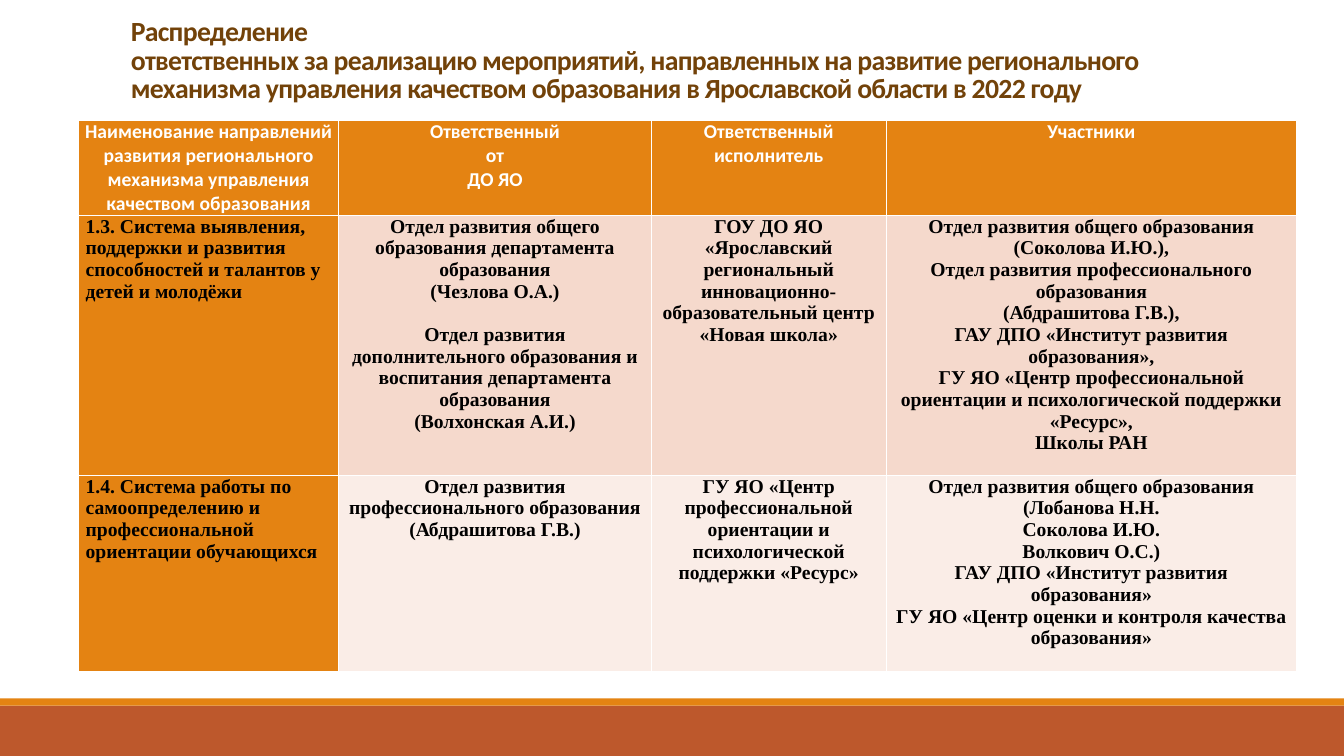
from dataclasses import dataclass

from pptx import Presentation
from pptx.dml.color import RGBColor
from pptx.enum.shapes import MSO_SHAPE
from pptx.enum.text import PP_ALIGN
from pptx.util import Inches, Pt

RECTANGLE = MSO_SHAPE.RECTANGLE
LEFT = PP_ALIGN.LEFT
CENTER = PP_ALIGN.CENTER


@dataclass(frozen=True)
class Theme:
    heading_font: str = "Calibri"
    body_font: str = "Times New Roman"
    title_size: float = 19.8
    table_size: float = 14
    title_color: str = "724209"
    header_text: str = "FFFFFF"
    body_text: str = "000000"
    accent: str = "E48312"
    footer: str = "BD582C"
    row_fills: tuple = ("F5D9CC", "FAEDE7")


TITLE = (
    "Распределение\n"
    "ответственных за реализацию мероприятий, направленных на развитие "
    "регионального механизма управления качеством образования "
    "в Ярославской области в 2022 году"
)
HEADERS = [
    "Наименование направлений развития регионального механизма управления качеством образования",
    "Ответственный\nот\nДО ЯО",
    "Ответственный\nисполнитель",
    "Участники",
]
ROWS = [
    [
        "1.3. Система выявления, поддержки и развития способностей и талантов у детей и молодёжи",
        "Отдел развития общего образования департамента образования\n"
        "(Чезлова О.А.)\n"
        "Отдел развития дополнительного образования и воспитания департамента образования\n"
        "(Волхонская А.И.)",
        "ГОУ ДО ЯО «Ярославский региональный инновационно-образовательный центр «Новая школа»",
        "Отдел развития общего образования\n"
        "(Соколова И.Ю.),\n"
        "Отдел развития профессионального образования\n"
        "(Абдрашитова Г.В.),\n"
        "ГАУ ДПО «Институт развития образования»,\n"
        "ГУ ЯО «Центр профессиональной ориентации и психологической поддержки «Ресурс»,\n"
        "Школы РАН",
    ],
    [
        "1.4. Система работы по самоопределению и профессиональной ориентации обучающихся",
        "Отдел развития профессионального образования\n(Абдрашитова Г.В.)",
        "ГУ ЯО «Центр профессиональной ориентации и психологической поддержки «Ресурс»",
        "Отдел развития общего образования\n"
        "(Лобанова Н.Н.\n"
        "Соколова И.Ю.\n"
        "Волкович О.С.)\n"
        "ГАУ ДПО «Институт развития образования»\n"
        "ГУ ЯО «Центр оценки и контроля качества образования»",
    ],
]
COLUMN_WIDTHS = [2.58, 3.1, 2.33, 4.07]
ROW_HEIGHTS = [0.95, 2.58, 1.94]


class SlideBuilder:
    def __init__(self, slide, theme):
        self.slide = slide
        self.theme = theme

    def format_text(self, text_frame, font, size, color, alignment):
        for paragraph in text_frame.paragraphs:
            paragraph.alignment = alignment
            for run in paragraph.runs:
                run.font.name = font
                run.font.size = Pt(size)
                run.font.bold = True
                run.font.color.rgb = RGBColor.from_string(color)

    def band(self, top, height, color):
        shape = self.slide.shapes.add_shape(
            RECTANGLE, 0, Inches(top), Inches(13.33), Inches(height)
        )
        shape.shadow.inherit = False
        shape.fill.solid()
        shape.fill.fore_color.rgb = RGBColor.from_string(color)
        shape.line.fill.background()

    def title(self, text, left, top, width, height):
        shape = self.slide.shapes.add_textbox(
            Inches(left), Inches(top), Inches(width), Inches(height)
        )
        text_frame = shape.text_frame
        text_frame.word_wrap = True
        text_frame.margin_top = text_frame.margin_bottom = 0
        text_frame.text = text
        theme = self.theme
        self.format_text(
            text_frame, theme.heading_font, theme.title_size, theme.title_color, LEFT
        )
        for paragraph in text_frame.paragraphs:
            paragraph.line_spacing = 0.85
            for run in paragraph.runs:
                run.font._element.set("spc", "-50")

    def cell(self, cell, text, fill, font, color, alignment, margin):
        cell.fill.solid()
        cell.fill.fore_color.rgb = RGBColor.from_string(fill)
        cell.margin_left = cell.margin_right = Inches(margin)
        cell.margin_top = cell.margin_bottom = 0
        cell.text_frame.text = text
        self.format_text(
            cell.text_frame, font, self.theme.table_size, color, alignment
        )

    def table(self, headers, rows, left, top):
        theme = self.theme
        table = self.slide.shapes.add_table(
            len(rows) + 1, len(headers), Inches(left), Inches(top),
            Inches(sum(COLUMN_WIDTHS)), Inches(sum(ROW_HEIGHTS)),
        ).table
        for column, width in zip(table.columns, COLUMN_WIDTHS):
            column.width = Inches(width)
        for row, height in zip(table.rows, ROW_HEIGHTS):
            row.height = Inches(height)
        for column, text in enumerate(headers):
            self.cell(
                table.cell(0, column), text, theme.accent,
                theme.heading_font, theme.header_text, CENTER, 0.06,
            )
        for row, (texts, row_fill) in enumerate(zip(rows, theme.row_fills), start=1):
            for column, text in enumerate(texts):
                fill, alignment = (row_fill, CENTER) if column else (theme.accent, LEFT)
                self.cell(
                    table.cell(row, column), text, fill,
                    theme.body_font, theme.body_text, alignment, 0.07,
                )
        return table


def main():
    presentation = Presentation()
    presentation.slide_width = Inches(13.33)
    presentation.slide_height = Inches(7.5)
    slide = presentation.slides.add_slide(presentation.slide_layouts[6])
    theme = Theme()
    builder = SlideBuilder(slide, theme)
    builder.band(7, 0.5, theme.footer)
    builder.band(6.93, 0.07, theme.accent)
    builder.title(TITLE, 1.2, 0.19, 11, 0.9)
    table = builder.table(HEADERS, ROWS, 0.78, 1.19)
    second_department = table.cell(1, 1).text_frame.paragraphs[2]
    second_department.space_before = Pt(15.5)
    presentation.save("out.pptx")


if __name__ == "__main__":
    main()
